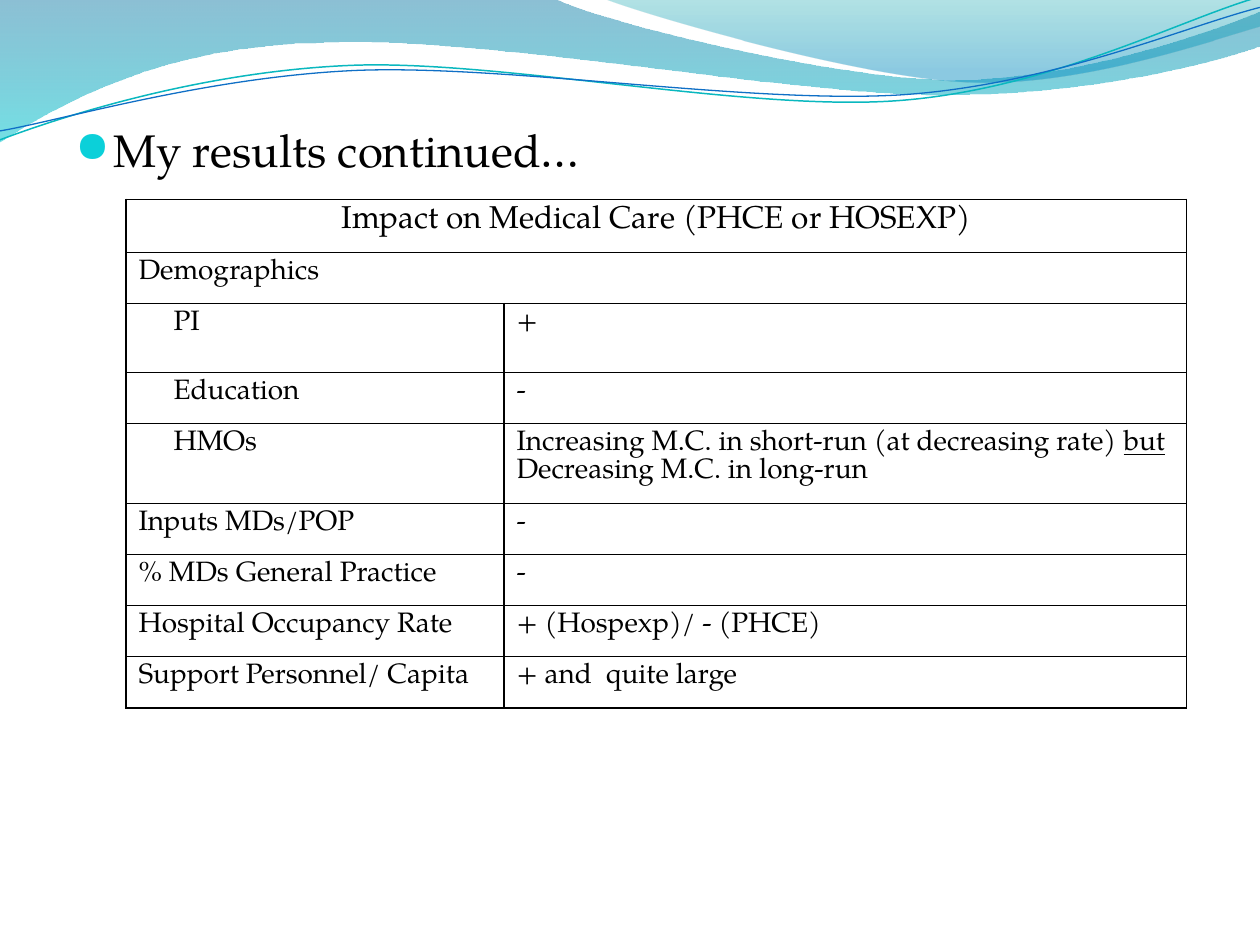
import pptx
import pptx.util
import pptx.dml.color
import pptx.enum.text
from lxml import etree

Cm, Pt = pptx.util.Cm, pptx.util.Pt
RGB = pptx.dml.color.RGBColor
ALIGN = pptx.enum.text.PP_ALIGN
qn = pptx.oxml.ns.qn

FONT = "TeX Gyre Pagella"
BLACK = RGB(0, 0, 0)
CYAN = RGB(0x0B, 0xD0, 0xD9)
TEAL = RGB(0x0A, 0xB8, 0xBF)
BLUE = RGB(0x0F, 0x6F, 0xC6)

TITLE = "My results continued…"
HEAD = "Impact on Medical Care (PHCE or HOSEXP)"
GROUP = "Demographics"
LOW, TALL = 1.03, 1.39
# label, indented, lines of (text, underlined) runs, row height in cm
ROWS = [
    ("PI", True, [[("+", False)]], TALL),
    ("Education", True, [[("-", False)]], LOW),
    ("HMOs", True,
     [[("Increasing M.C. in short-run (at decreasing rate) ", False), ("but", True)],
      [("Decreasing M.C. in long-run", False)]], TALL),
    ("Inputs MDs/POP", False, [[("-", False)]], LOW),
    ("% MDs General Practice", False, [[("-", False)]], LOW),
    ("Hospital Occupancy Rate", False, [[("+ (Hospexp)/ - (PHCE)", False)]], LOW),
    ("Support Personnel/ Capita", False, [[("+ and  quite large", False)]], LOW),
]
COLS = (7.62, 13.76)

# Waves in cm: start point, then steps of 1 point (line) or 3 points (curve)
BANDS = [
    ([(0, -0.03), [(11.18, -0.03)],
      [(12.09, 0.43), (16.87, 1.6), (19.25, 1.6)],
      [(21.67, 1.6), (24.33, 0.66), (25.4, 0.23)], [(25.43, 0.91)],
      [(24.97, 1.12), (22.1, 1.93), (18.95, 1.91)],
      [(15.8, 1.91), (9.7, 0.71), (6.53, 0.86)],
      [(3.28, 0.89), (1.17, 2.11), (-0.03, 2.87)]],
     [(0, RGB(0x00, 0x74, 0xA1), 45), (1, RGB(0x00, 0xC6, 0xCF), 55)]),
    ([(12.17, -0.03),
      [(12.93, 0.28), (17.32, 1.57), (19.53, 1.65)],
      [(21.74, 1.75), (24.41, 0.81), (25.4, 0.53)], [(25.4, 0)]],
     [(0, RGB(0x00, 0xA1, 0xA9), 30), (0.8, RGB(0x00, 0x8B, 0xBF), 45)]),
]
LINES = [
    ([(0, 2.82),
      [(1.22, 2.36), (4.01, 1.45), (7.04, 1.32)],
      [(10.03, 1.19), (15.06, 2.26), (18.11, 2.03)],
      [(21.16, 1.8), (23.83, 0.38), (25.35, -0.05)]], TEAL, 0.85),
    ([(0, 2.64),
      [(1.19, 2.44), (4.17, 1.55), (7.19, 1.42)],
      [(10.24, 1.3), (15.16, 2.11), (18.21, 1.91)],
      [(21.23, 1.7), (23.9, 0.53), (25.4, 0.15)]], BLUE, 0.75),
]


def sub(node, tag, index=None, **attrs):
    """Add a DrawingML child, at the end or at an index."""
    kid = etree.Element(qn("a:" + tag), attrs)
    node.insert(len(node) if index is None else index, kid)
    return kid


def wave(slide, track, close):
    """Draw a freeform and join each three-point step into one Bezier curve."""
    start, *steps = track
    pts = [(Cm(x), Cm(y)) for step in steps for x, y in step]
    form = slide.shapes.build_freeform(Cm(start[0]), Cm(start[1]))
    form.add_line_segments(pts, close=close)
    shape = form.convert_to_shape()
    shape.shadow.inherit = False
    legs = iter(list(shape._element.iter(qn("a:lnTo"))))
    for step in steps:
        parts = [next(legs) for _ in step]
        if len(parts) == 3:
            home = parts[0].getparent()
            bend = sub(home, "cubicBezTo", home.index(parts[0]))
            for part in parts:
                bend.append(part[0])
                home.remove(part)
    return shape


def band(slide, track, stops):
    shape = wave(slide, track, True)
    shape.line.fill.background()
    shape.fill.gradient()
    shape.fill.gradient_angle = 270
    for stop, (pos, color, _) in zip(shape.fill.gradient_stops, stops):
        stop.position, stop.color.rgb = pos, color
    tints = shape._element.spPr.iter(qn("a:srgbClr"))
    for tint, (_, _, alpha) in zip(list(tints), stops):
        sub(tint, "alpha", val=str(alpha * 1000))


def curve(slide, track, color, width):
    shape = wave(slide, track, False)
    shape.fill.background()
    shape.line.color.rgb = color
    shape.line.width = Pt(width)


def put(frame, lines, size=16, align=ALIGN.LEFT):
    """Write a string, or lines of (text, underlined) runs."""
    if isinstance(lines, str):
        lines = [[(lines, False)]]
    frame.word_wrap = True
    for i, line in enumerate(lines):
        para = frame.add_paragraph() if i else frame.paragraphs[0]
        para.alignment = align
        for text, under in line:
            run = para.add_run()
            run.text = text
            font = run.font
            font.name, font.size, font.underline = FONT, Pt(size), under
            font.color.rgb = BLACK


def title(slide):
    box = slide.shapes.add_textbox(Cm(1.27), Cm(2.34), Cm(22.86), Cm(15.24))
    put(box.text_frame, TITLE, size=26)
    props = box.text_frame.paragraphs[0]._p.get_or_add_pPr()
    props.set("marL", str(Cm(0.76)))
    props.set("indent", str(Cm(-0.76)))
    sub(sub(props, "buClr"), "srgbClr", val=str(CYAN))
    sub(props, "buSzPct", val="95000")
    sub(props, "buFont", typeface="OpenSymbol")
    sub(props, "buChar", char="●")


def edge(cell):
    """Clear the fill of a cell and rule its four sides."""
    cell.fill.background()
    props = cell._tc.get_or_add_tcPr()
    for i, side in enumerate(("lnL", "lnR", "lnT", "lnB")):
        rule = sub(props, side, i, w=str(Pt(1)))
        sub(sub(rule, "solidFill"), "srgbClr", val=str(BLACK))


def grid(slide):
    tall = [1.07, LOW] + [row[3] for row in ROWS]
    table = slide.shapes.add_table(len(tall), len(COLS), Cm(2.54), Cm(4.02),
                                   Cm(sum(COLS)), Cm(sum(tall))).table
    table.first_row = table.horz_banding = False
    for col, width in zip(table.columns, COLS):
        col.width = Cm(width)
    for row, height in zip(table.rows, tall):
        row.height = Cm(height)
        for cell in row.cells:
            edge(cell)
    for r in (0, 1):
        table.cell(r, 0).merge(table.cell(r, 1))
    put(table.cell(0, 0).text_frame, HEAD, size=18, align=ALIGN.CENTER)
    put(table.cell(1, 0).text_frame, GROUP)
    for r, (label, inset, lines, _) in enumerate(ROWS, 2):
        left, right = table.cell(r, 0), table.cell(r, 1)
        if inset:
            left.margin_left = Cm(0.96)
        put(left.text_frame, label)
        put(right.text_frame, lines)


def main():
    deck = pptx.Presentation()
    deck.slide_width, deck.slide_height = Cm(25.4), Cm(19.05)
    slide = deck.slides.add_slide(deck.slide_layouts[6])
    for item in BANDS:
        band(slide, *item)
    for item in LINES:
        curve(slide, *item)
    title(slide)
    grid(slide)
    deck.save("out.pptx")


if __name__ == "__main__":
    main()
